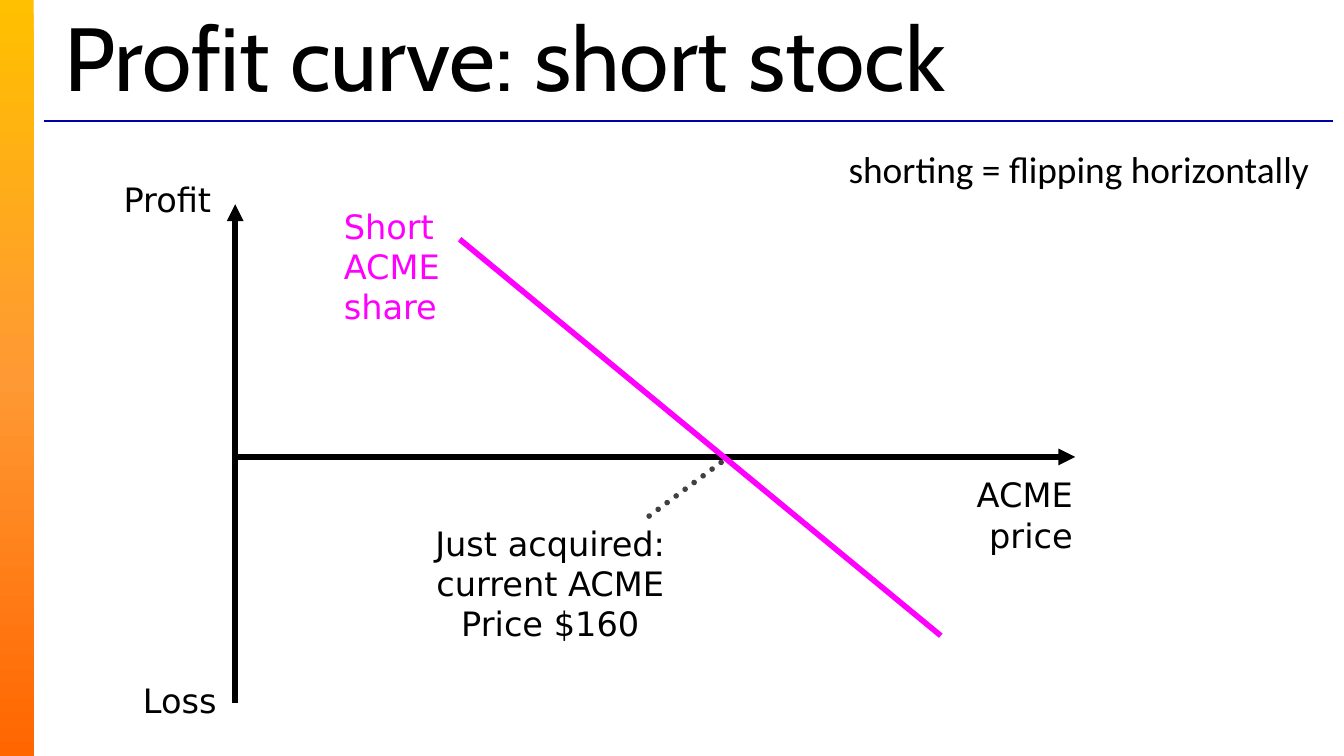
import copy

import pptx
import pptx.dml.color
import pptx.enum.dml
import pptx.enum.shapes
import pptx.enum.text
import pptx.oxml.ns
import pptx.util
from pptx.util import Inches

ALIGN = pptx.enum.text.PP_ALIGN
ANCHOR = pptx.enum.text.MSO_ANCHOR

THEME = {
    "ink": "000000", "short": "FF00FF", "rule": "0000A5", "guide": "404040", "paper": "FFFFFF",
    "band": [(0, "FFC000"), (0.5, "FF9933"), (1, "FF6600")],
    "title": ("Cabin", 48), "label": ("DejaVu Sans", 18), "note": ("Calibri", 20),
}

# Widescreen page
WIDTH = 10
HEIGHT = WIDTH * 9 / 16

# Content: paragraphs, (left, top, width, height), alignment, colour
TITLE = "Profit curve: short stock"
NOTE = "shorting = flipping horizontally"
LABELS = [
    (["ACME price"], (7, 3.48, 1.08, 0.71), ALIGN.RIGHT, "ink"),
    (["Short", "ACME share"], (2.46, 1.48, 1.5, 1.01), ALIGN.LEFT, "short"),
    (["Just acquired: current ACME Price $160"], (3.01, 3.84, 2.17, 1.01), ALIGN.CENTER, "ink"),
    (["Profit"], (0.5, 1.28, 1.17, 0.4), ALIGN.RIGHT, "ink"),
    (["Loss"], (0.54, 5.01, 1.17, 0.4), ALIGN.RIGHT, "ink"),
]

# Chart geometry
ORIGIN_X, AXIS_Y = 1.75, 3.4
PROFIT_TOP, LOSS_BOTTOM, PRICE_END = 1.52, 5.23, 8
BREAK_EVEN = (5.42, AXIS_Y)

# Start, end, colour, width, arrow at start, dotted
RULE = ((0.33, 0.9), (9.92, 0.9), "rule", 0.75, False, False)
CHART_LINES = [
    ((ORIGIN_X, PROFIT_TOP), (ORIGIN_X, LOSS_BOTTOM), "ink", 3, True, False),
    ((PRICE_END, AXIS_Y), (ORIGIN_X, AXIS_Y), "ink", 3, True, False),
    ((3.42, 1.78), (7, 4.73), "short", 3, False, False),
    ((4.83, 3.84), BREAK_EVEN, "guide", 3, False, True),
]


def rgb(value):
    return pptx.dml.color.RGBColor.from_string(value)


def add_line(page, start, end, color, width, arrow, dotted):
    points = [Inches(value) for value in start + end]
    connector = page.shapes.add_connector(pptx.enum.shapes.MSO_CONNECTOR.STRAIGHT, *points)
    connector.line.color.rgb = rgb(THEME[color])
    connector.line.width = pptx.util.Pt(width)
    properties = connector._element.spPr
    outline = properties.find(pptx.oxml.ns.qn("a:ln"))
    if dotted:
        connector.line.dash_style = pptx.enum.dml.MSO_LINE.ROUND_DOT
        outline.set("cap", "rnd")
    if arrow:
        outline.append(outline.makeelement(pptx.oxml.ns.qn("a:headEnd"), {"type": "triangle"}))
    properties.append(properties.makeelement(pptx.oxml.ns.qn("a:effectLst")))


def add_rectangle(page, place):
    box = page.shapes.add_shape(pptx.enum.shapes.MSO_SHAPE.RECTANGLE, *map(Inches, place))
    box.shadow.inherit = False
    box.line.fill.background()
    return box


def write(box, paragraphs, style, color="ink", align=ALIGN.LEFT, anchor=ANCHOR.TOP):
    frame = box.text_frame
    frame.word_wrap = True
    frame.vertical_anchor = anchor
    frame.text = "\n".join(paragraphs)
    for paragraph in frame.paragraphs:
        paragraph.alignment = align
        paragraph.font.name, size = THEME[style]
        paragraph.font.size = pptx.util.Pt(size)
        paragraph.font.color.rgb = rgb(THEME[color])


def add_band(page):
    fill = add_rectangle(page, (0, 0, 0.25, HEIGHT)).fill
    fill.gradient()
    fill.gradient_angle = 270
    first = fill._fill._gradFill.gsLst[0]
    first.addnext(copy.deepcopy(first))
    for stop, (position, color) in zip(fill.gradient_stops, THEME["band"]):
        stop.position = position
        stop.color.rgb = rgb(color)


def main():
    deck = pptx.Presentation()
    deck.slide_width, deck.slide_height = Inches(WIDTH), Inches(HEIGHT)
    page = deck.slides.add_slide(deck.slide_layouts[6])

    # Side band, rule and title
    add_band(page)
    add_line(page, *RULE)
    title = page.shapes.add_textbox(*map(Inches, (0.38, 0.15, 9.58, 0.53)))
    write(title, [TITLE], "title", anchor=ANCHOR.MIDDLE)

    # Axes, profit line and pointer
    for line in CHART_LINES:
        add_line(page, *line)

    # Chart labels
    for paragraphs, place, align, color in LABELS:
        label = page.shapes.add_textbox(*map(Inches, place))
        write(label, paragraphs, "label", color, align)

    # Note at top right
    note = add_rectangle(page, (5.92, 1.03, 3.92, 0.45))
    note.fill.solid()
    note.fill.fore_color.rgb = rgb(THEME["paper"])
    write(note, [NOTE], "note", align=ALIGN.RIGHT, anchor=ANCHOR.MIDDLE)

    deck.save("out.pptx")


if __name__ == "__main__":
    main()
